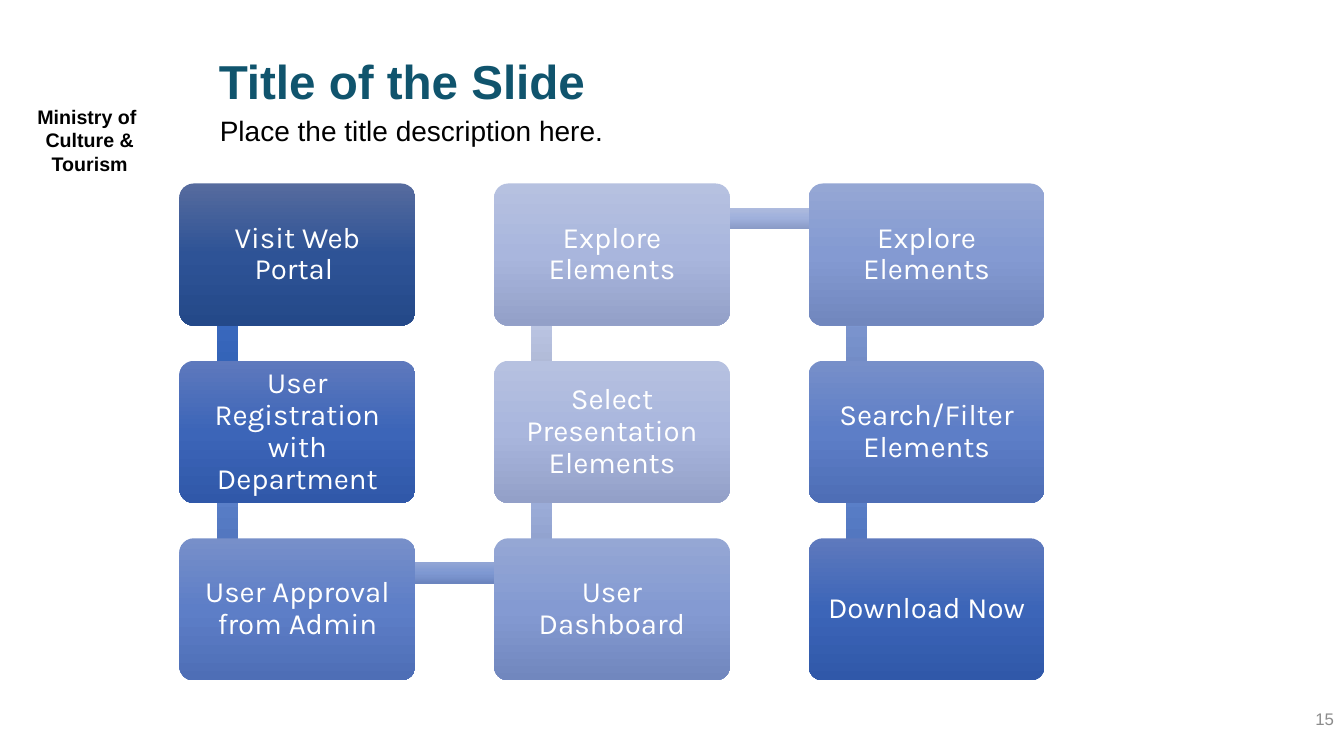
from copy import deepcopy
from dataclasses import dataclass

from pptx import Presentation
from pptx.dml.color import RGBColor
from pptx.enum.shapes import MSO_SHAPE
from pptx.enum.text import MSO_ANCHOR, PP_ALIGN
from pptx.oxml.ns import qn
from pptx.util import Inches, Pt

RECT, ROUND = MSO_SHAPE.RECTANGLE, MSO_SHAPE.ROUNDED_RECTANGLE
LEFT, CENTER, RIGHT = PP_ALIGN.LEFT, PP_ALIGN.CENTER, PP_ALIGN.RIGHT
TOP, MIDDLE = MSO_ANCHOR.TOP, MSO_ANCHOR.MIDDLE

Gradient = tuple[str, str, str]
Box = tuple[float, float, float, float]


@dataclass(frozen=True)
class TextStyle:
    size: float
    color: str
    font: str = "Arial"
    bold: bool = False
    align: PP_ALIGN = LEFT
    anchor: MSO_ANCHOR = TOP
    spacing: float | Pt | None = None
    margins: tuple[float, float] = (0, 0)


@dataclass(frozen=True)
class Theme:
    title: TextStyle = TextStyle(34, "10546D", bold=True, spacing=Pt(40))
    description: TextStyle = TextStyle(20, "000000", spacing=Pt(16.5))
    ministry: TextStyle = TextStyle(14, "000000", bold=True, align=CENTER, margins=(0.1, 0.05))
    number: TextStyle = TextStyle(12, "8C8C8C", align=RIGHT, anchor=MIDDLE, margins=(0.1, 0.05))
    step: TextStyle = TextStyle(21, "FFFFFF", "Karla", align=CENTER, anchor=MIDDLE,
                                spacing=0.9, margins=(0.09, 0.09))
    step_fills: tuple[Gradient, ...] = (
        ("566B9E", "2E5396", "244989"),
        ("5E79BD", "3C65B8", "3058A9"),
        ("778FC9", "5D7EC7", "4E6EB6"),
        ("95A7D4", "849AD2", "7187BE"),
        ("B6C1E0", "A9B6DD", "93A0C8"),
    )
    link_fills: tuple[Gradient, ...] = (
        ("5E7EC4", "3B6BC1", "2F5EB1"),
        ("7691CC", "5C81CA", "4C70B9"),
        ("91A5D5", "7E98D2", "6C85BF"),
        ("AEBBDE", "9FB0DC", "8A9BC7"),
        ("CAD2E9", "BFC9E6", "A7B1CF"),
    )


@dataclass(frozen=True)
class Label:
    lines: tuple[str, ...]
    box: Box
    style: TextStyle


@dataclass(frozen=True)
class Step:
    text: str
    column: int
    row: int
    tone: int

    @property
    def left(self) -> float:
        return GRID_LEFT + self.column * COLUMN_PITCH

    @property
    def top(self) -> float:
        return GRID_TOP + self.row * ROW_PITCH


THEME = Theme()
GRID_LEFT, GRID_TOP = 1.78, 1.82
COLUMN_PITCH, ROW_PITCH = 3.12, 1.76
STEP_W, STEP_H = 2.34, 1.41
LINK_W = 0.21

LABELS = (
    Label(("Ministry of ", "Culture & Tourism"), (0, 0.99, 1.78, 0.57), THEME.ministry),
    Label(("15",), (10.33, 6.93, 3, 0.4), THEME.number),
    Label(("Place the title description here.",), (2.18, 1.23, 8.45, 0.68), THEME.description),
    Label(("Title of the Slide",), (2.17, 0.53, 8.38, 0.53), THEME.title),
)
STEPS = (
    Step("Visit Web Portal ", 0, 0, 0),
    Step("User Registration with Department", 0, 1, 1),
    Step("User Approval from Admin", 0, 2, 2),
    Step("User Dashboard", 1, 2, 3),
    Step("Select Presentation Elements", 1, 1, 4),
    Step("Explore Elements", 1, 0, 4),
    Step("Explore Elements", 2, 0, 3),
    Step("Search/Filter Elements", 2, 1, 2),
    Step("Download Now", 2, 2, 1),
)
LINK_TONES = (0, 1, 2, 3, 4, 3, 2, 1)


def set_all(target, values: dict) -> None:
    """Set each named attribute of the target."""
    for name, value in values.items():
        setattr(target, name, value)


def write(tf, lines: tuple[str, ...], style: TextStyle) -> None:
    """Fill a text frame with one styled paragraph per line."""
    x, y = map(Inches, style.margins)
    set_all(tf, dict(word_wrap=True, vertical_anchor=style.anchor,
                     margin_left=x, margin_right=x, margin_top=y, margin_bottom=y))
    for i, line in enumerate(lines):
        p = tf.add_paragraph() if i else tf.paragraphs[0]
        set_all(p, dict(alignment=style.align, line_spacing=style.spacing))
        r = p.add_run()
        r.text = line
        set_all(r.font, dict(name=style.font, size=Pt(style.size), bold=style.bold))
        r.font.color.rgb = RGBColor.from_string(style.color)


def add_block(s, kind: MSO_SHAPE, box: Box, colors: Gradient):
    """Add a borderless shape with a top-to-bottom gradient."""
    sp = s.shapes.add_shape(kind, *map(Inches, box))
    sp.shadow.inherit = False
    sp.line.fill.background()
    sp.fill.gradient()
    sp.fill.gradient_angle = 270
    stops = sp._element.spPr.find(".//" + qn("a:gsLst"))
    stops.insert(1, deepcopy(stops[0]))
    for i, (stop, color) in enumerate(zip(sp.fill.gradient_stops, colors)):
        stop.position = i / 2
        stop.color.rgb = RGBColor.from_string(color)
    return sp


def add_link(s, start: Step, end: Step, tone: int) -> None:
    """Add the bar that runs between two neighbouring steps."""
    left, top = min(start.left, end.left), min(start.top, end.top)
    if start.column == end.column:
        box = (left + 0.37, top + 0.35, LINK_W, ROW_PITCH)
    else:
        box = (left + 0.48, top + 0.24, COLUMN_PITCH, LINK_W)
    add_block(s, RECT, box, THEME.link_fills[tone])


def add_step(s, step: Step) -> None:
    """Add one rounded step with its text."""
    sp = add_block(s, ROUND, (step.left, step.top, STEP_W, STEP_H), THEME.step_fills[step.tone])
    sp.adjustments[0] = 0.1
    write(sp.text_frame, (step.text,), THEME.step)


def main() -> None:
    """Build the slide and save it."""
    prs = Presentation()
    set_all(prs, dict(slide_width=Inches(13.33), slide_height=Inches(7.5)))
    s = prs.slides.add_slide(prs.slide_layouts[6])
    for start, end, tone in zip(STEPS, STEPS[1:], LINK_TONES):
        add_link(s, start, end, tone)
    for step in STEPS:
        add_step(s, step)
    for label in LABELS:
        sp = s.shapes.add_textbox(*map(Inches, label.box))
        write(sp.text_frame, label.lines, label.style)
    prs.save("out.pptx")


if __name__ == "__main__":
    main()
